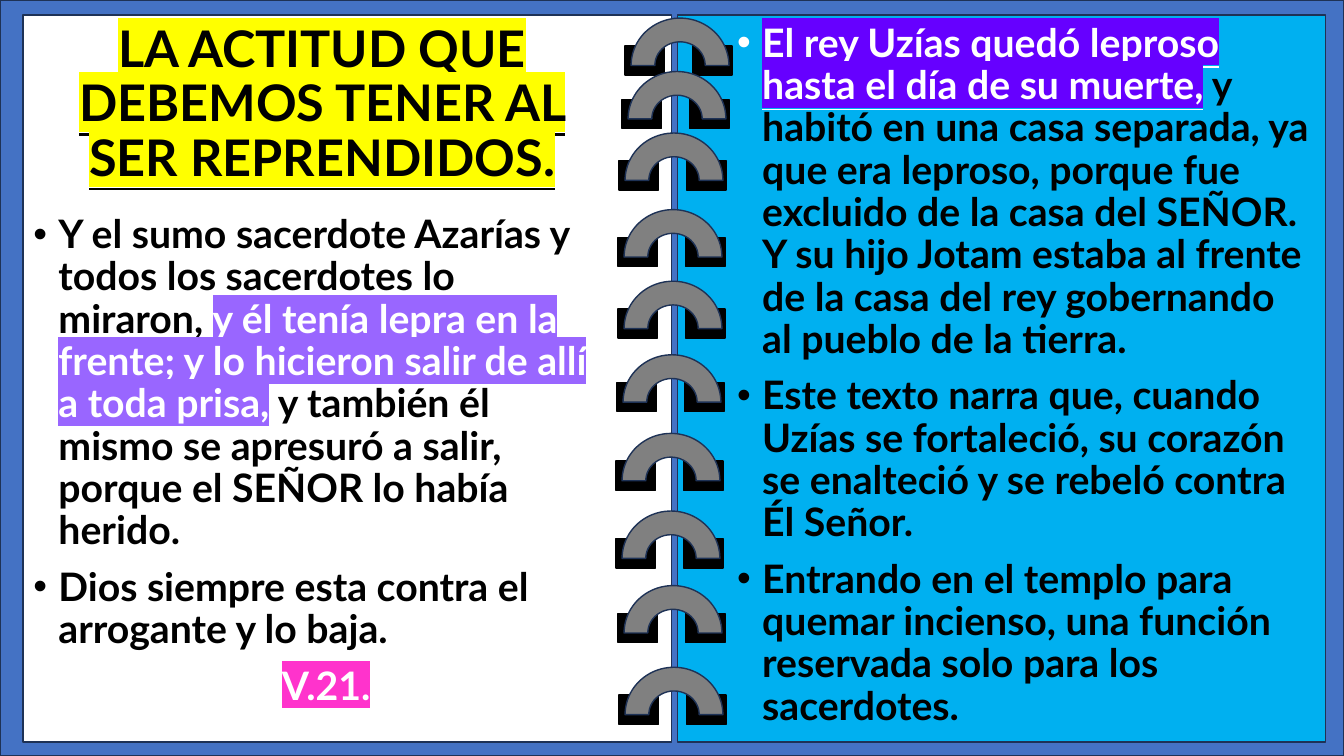
from dataclasses import dataclass

from lxml.etree import SubElement as Sub
from pptx import Presentation
from pptx.dml.color import RGBColor as Color
from pptx.enum.shapes import MSO_SHAPE as Kind
from pptx.enum.text import MSO_ANCHOR as Anchor, MSO_AUTO_SIZE as Fit, PP_ALIGN as Align
from pptx.oxml.ns import qn
from pptx.util import Inches, Pt


@dataclass(frozen=True)
class Theme:
    font: str = "Lato"
    head: int = 36
    body: int = 28
    cover: str = "4472C4"
    edge: str = "1E3256"
    sky: str = "00B0F0"
    white: str = "FFFFFF"
    black: str = "000000"
    steel: str = "808080"
    yellow: str = "FFFF00"
    lilac: str = "9966FF"
    pink: str = "FF33CC"
    violet: str = "6600FF"


class Page:
    """One slide on a grid whose cells are a tenth of an inch."""

    def __init__(self, deck, theme):
        self.theme = theme
        self.slide = deck.slides.add_slide(deck.slide_layouts[3])
        self.holders = list(self.slide.placeholders)

    def cells(self, *counts):
        return [Inches(count / 10) for count in counts]

    def shape(self, kind, box, fill, edge, group=None):
        host = group or self.slide
        item = host.shapes.add_shape(kind, *self.cells(*box))
        item.shadow.inherit = False
        item.fill.solid()
        item.fill.fore_color.rgb = Color.from_string(fill)
        item.line.color.rgb = Color.from_string(edge)
        item.line.width = Pt(1)

    def ring(self, col, row):
        group = self.slide.shapes.add_group_shape()
        look = self.theme
        for shift in (6.1, -0.6):
            hole = (col + shift, row + 2.75, 3.9, 2.9)
            self.shape(Kind.RECTANGLE, hole, look.black, look.black, group)
        self.shape(Kind.BLOCK_ARC, (col, row, 9.7, 9.4), look.steel, look.edge, group)

    def holder(self, index, box, anchor):
        item = self.holders[index]
        item.left, item.top, item.width, item.height = self.cells(*box)
        tree = item.element.getparent()
        tree.append(item.element)  # bring to front
        frame = item.text_frame
        frame.word_wrap = True
        frame.auto_size = Fit.NONE
        frame.vertical_anchor = anchor
        return frame

    def run(self, para, text, size, mark=None, ink=None):
        part = para.add_run()
        part.text = text
        font = part.font
        font.name, font.size, font.bold = self.theme.font, Pt(size), True
        font.underline = mark is not None
        font.color.rgb = Color.from_string(ink or self.theme.black)
        if mark:
            props = part._r.get_or_add_rPr()
            glow = Sub(props, qn("a:highlight"))
            Sub(glow, qn("a:srgbClr")).set("val", mark)
            props.find(qn("a:solidFill")).addnext(glow)

    def title(self, box, text):
        para = self.holder(0, box, Anchor.MIDDLE).paragraphs[0]
        para.alignment, para.line_spacing = Align.CENTER, 0.9
        self.run(para, text, self.theme.head, self.theme.yellow)

    def list(self, index, box, items):
        frame = self.holder(index, box, Anchor.TOP)
        for place, (align, runs) in enumerate(items):
            para = frame.add_paragraph() if place else frame.paragraphs[0]
            para.alignment, para.line_spacing = align, 0.9
            para.space_before = Pt(10)
            props = para._p.get_or_add_pPr()
            props.set("marL", str(Inches(0.25)))
            props.set("indent", str(Inches(-0.25)))
            Sub(props, qn("a:buFont")).set("typeface", "Arial")
            Sub(props, qn("a:buChar")).set("char", "•")
            for text, mark in runs:
                ink = self.theme.white if mark else None
                self.run(para, text, self.theme.body, mark, ink)


def main():
    deck = Presentation()
    deck.slide_width, deck.slide_height = Inches(13.33), Inches(7.5)
    look = Theme()
    page = Page(deck, look)

    # Notebook cover and its two sheets
    for box, fill in (
        ((0, 0, 133.3, 75), look.cover),
        ((67.2, 1.5, 64.3, 72.1), look.sky),
        ((2.3, 1.5, 64.3, 72.1), look.white),
    ):
        page.shape(Kind.RECTANGLE, box, fill, look.edge)

    # Binding rings, set by hand along the spine
    rings = (
        (62.6, 1.8), (62.3, 7.1), (62, 13.2), (61.9, 20.8), (61.9, 27.9),
        (61.8, 35.2), (61.7, 43), (61.7, 50.7), (61.9, 58.1), (62, 66.2),
    )
    for col, row in rings:
        page.ring(col, row)

    # Left sheet
    page.title((2.3, 1.5, 59.3, 17.9), "LA ACTITUD QUE DEBEMOS TENER AL SER REPRENDIDOS.")
    page.list(1, (2.3, 20.8, 57.6, 52.8), [
        (Align.LEFT, [
            ("Y el sumo sacerdote Azarías y todos los sacerdotes lo miraron, ", None),
            ("y él tenía lepra en la frente; y lo hicieron salir de allí a toda prisa,",
             look.lilac),
            (" y también él mismo se apresuró a salir, porque el SEÑOR lo había herido.",
             None),
        ]),
        (Align.LEFT, [("Dios siempre esta contra el arrogante y lo baja.", None)]),
        (Align.CENTER, [("V.21.", look.pink)]),
    ])

    # Right sheet
    page.list(2, (72.1, 1.8, 59.1, 71.8), [
        (Align.LEFT, [
            ("El rey Uzías quedó leproso hasta el día de su muerte,", look.violet),
            (" y habitó en una casa separada, ya que era leproso, porque fue excluido "
             "de la casa del SEÑOR. Y su hijo Jotam estaba al frente de la casa del rey "
             "gobernando al pueblo de la tierra.", None),
        ]),
        (Align.LEFT, [
            ("Este texto narra que, cuando Uzías se fortaleció, su corazón se enalteció "
             "y se rebeló contra Él Señor.", None),
        ]),
        (Align.LEFT, [
            ("Entrando en el templo para quemar incienso, una función reservada solo "
             "para los sacerdotes.", None),
        ]),
    ])

    deck.save("out.pptx")


if __name__ == "__main__":
    main()
